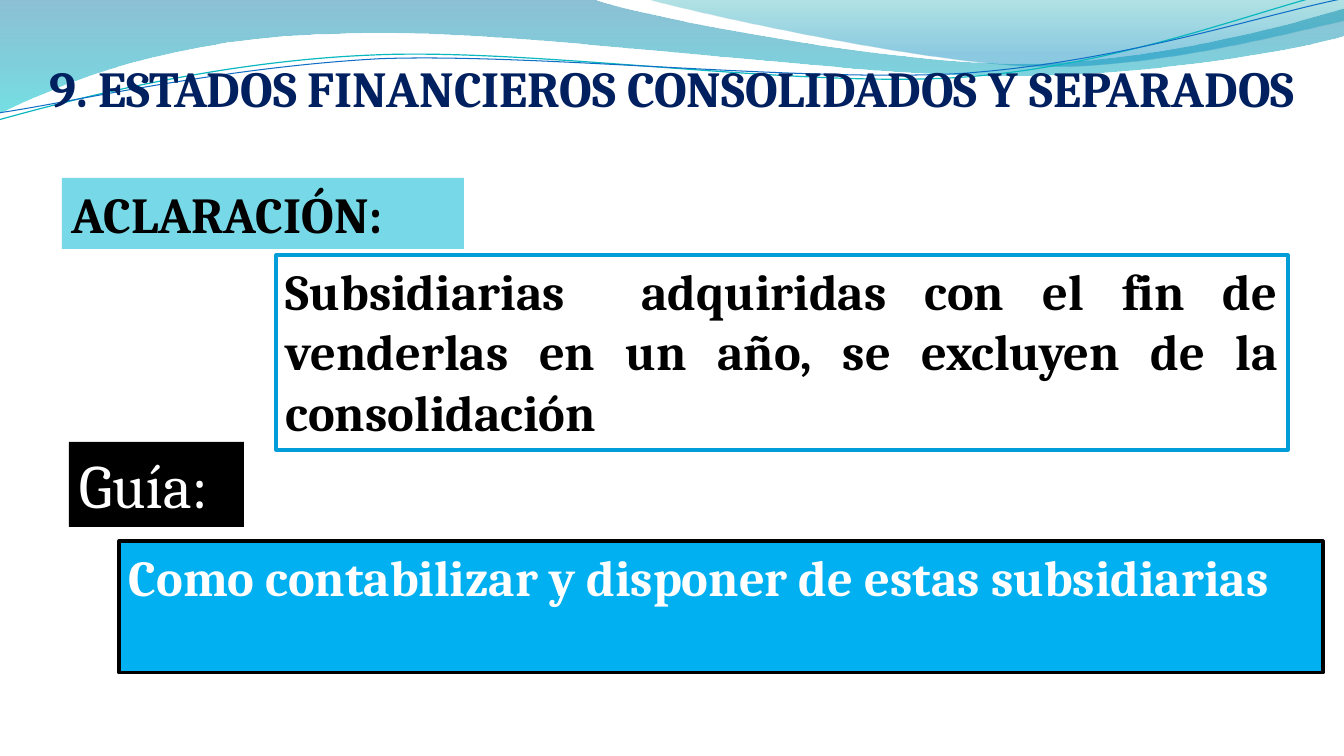
import pptx
import pptx.util
import pptx.dml.color
import pptx.enum.shapes
import pptx.enum.text
import pptx.oxml
import pptx.oxml.ns

RGB = pptx.dml.color.RGBColor
ALIGN = pptx.enum.text.PP_ALIGN
PX = 914400 / 100.8
DRAWING_NS = pptx.oxml.ns.nsdecls("a")
STRAND_TILT = 357.3

WHITE = RGB(0xFF, 0xFF, 0xFF)
BLACK = RGB(0x00, 0x00, 0x00)
NAVY = RGB(0x00, 0x20, 0x60)
SKY = RGB(0x00, 0xB0, 0xF0)
AQUA = RGB(0x77, 0xD9, 0xE8)
BORDER_BLUE = RGB(0x00, 0x9D, 0xD9)
DEEP_TEAL = RGB(0x00, 0x74, 0xA1)
TURQUOISE = RGB(0x00, 0xC6, 0xCF)
SEA_GREEN = RGB(0x00, 0xA1, 0xA9)
OCEAN = RGB(0x00, 0x8B, 0xBF)
STRAND_TEAL = RGB(0x0A, 0xB8, 0xBF)
STRAND_BLUE = RGB(0x0F, 0x6F, 0xC6)

WAVES = [
    ([[(0, 0)], [(592, -1)],
      [(639, 17), (892, 64), (1019, 64)], [(1147, 64), (1288, 26), (1344, 9)],
      [(1346, 36)],
      [(1322, 44), (1169, 77), (1002, 76)], [(836, 76), (513, 28), (346, 34)],
      [(173, 36), (61, 84), (-1, 114)]],
     [(0, DEEP_TEAL, 45), (1, TURQUOISE, 55)]),
    ([[(644, -1)],
      [(684, 11), (916, 62), (1033, 66)], [(1150, 70), (1292, 32), (1344, 21)],
      [(1344, 0)]],
     [(0, SEA_GREEN, 30), (0.8, OCEAN, 45)]),
]
STRANDS = [
    ([[(-3, 88)],
      [(64, 73), (213, 40), (372, 41)], [(532, 41), (794, 94), (957, 91)],
      [(1118, 88), (1264, 36), (1344, 22)]], STRAND_TEAL, 0.85),
    ([[(-2, 81)],
      [(63, 75), (220, 46), (381, 45)], [(541, 47), (801, 89), (962, 87)],
      [(1123, 83), (1266, 42), (1347, 30)]], STRAND_BLUE, 0.75),
]


def px(length):
    """Turn a length in px into EMU."""
    return pptx.util.Emu(round(length * PX))


def add_outline(slide, left, top, segments, close):
    """Draw straight and cubic segments with their origin at the given corner."""
    chain = [[(px(left + x), px(top + y)) for x, y in segment]
             for segment in segments]
    corners = [segment[-1] for segment in chain]
    builder = slide.shapes.build_freeform(*corners[0], scale=1.0)
    builder.add_line_segments(corners[1:], close=close)
    outline = builder.convert_to_shape()
    outline.shadow.inherit = False
    edges = list(outline._element.iter(pptx.oxml.ns.qn("a:lnTo")))
    for edge, segment in zip(edges, chain[1:]):
        if len(segment) == 3:
            points = "".join(f'<a:pt x="{x - outline.left}" y="{y - outline.top}"/>'
                             for x, y in segment)
            edge.getparent().replace(edge, pptx.oxml.parse_xml(
                f"<a:cubicBezTo {DRAWING_NS}>{points}</a:cubicBezTo>"))
    return outline


def add_header(slide, left, top):
    """Draw the translucent waves and the thin strands over them."""
    for segments, stops in WAVES:
        wave = add_outline(slide, left, top, segments, True)
        wave.line.fill.background()
        wave.fill.gradient()
        wave.fill.gradient_angle = 270
        for stop, (position, colour, _) in zip(wave.fill.gradient_stops, stops):
            stop.position = position
            stop.color.rgb = colour
        tints = wave._element.spPr.iter(pptx.oxml.ns.qn("a:srgbClr"))
        for tint, (_, _, opacity) in zip(list(tints), stops):
            tint.append(pptx.oxml.parse_xml(
                f'<a:alpha {DRAWING_NS} val="{opacity * 1000}"/>'))
    for segments, colour, width in STRANDS:
        strand = add_outline(slide, left, top, segments, False)
        strand.rotation = STRAND_TILT
        strand.fill.background()
        strand.line.color.rgb = colour
        strand.line.width = pptx.util.Pt(width)


def write(holder, wording, colour, size=36, bold=True, align=ALIGN.LEFT):
    """Put one paragraph at the top of a shape."""
    frame = holder.text_frame
    frame.word_wrap = True
    frame.auto_size = pptx.enum.text.MSO_AUTO_SIZE.SHAPE_TO_FIT_TEXT
    frame.vertical_anchor = pptx.enum.text.MSO_ANCHOR.TOP
    paragraph = frame.paragraphs[0]
    paragraph.text = wording
    paragraph.alignment = align
    paragraph.font.name = "Cambria"
    paragraph.font.size = pptx.util.Pt(size)
    paragraph.font.bold = bold
    paragraph.font.color.rgb = colour


def add_title(slide, box, wording):
    """Write the centred slide title."""
    title = slide.shapes.add_textbox(*map(px, box))
    write(title, wording, NAVY, align=ALIGN.CENTER)


def add_panel(slide, box, fill, border, wording, colour, **style):
    """Draw a filled panel with its text and an optional border."""
    panel = slide.shapes.add_shape(
        pptx.enum.shapes.MSO_SHAPE.RECTANGLE, *map(px, box))
    panel.shadow.inherit = False
    panel.fill.solid()
    panel.fill.fore_color.rgb = fill
    if border is None:
        panel.line.fill.background()
    else:
        panel.line.color.rgb = border
        panel.line.width = pptx.util.Pt(2.25)
    write(panel, wording, colour, **style)


def main():
    """Build the slide and save it."""
    deck = pptx.Presentation()
    deck.slide_width, deck.slide_height = px(1344), px(756)
    slide = deck.slides.add_slide(deck.slide_layouts[6])
    add_header(slide, 0, 0)
    add_title(slide, (0, 52, 1344, 132),
              "9. ESTADOS FINANCIEROS CONSOLIDADOS Y SEPARADOS")
    add_panel(slide, (276, 255, 1012, 195), WHITE, BORDER_BLUE,
              "Subsidiarias  adquiridas con el fin de venderlas en un año, "
              "se excluyen de la consolidación", BLACK, align=ALIGN.JUSTIFY)
    add_panel(slide, (62, 178, 402, 71), AQUA, None, "ACLARACIÓN:", BLACK)
    add_panel(slide, (69, 442, 175, 85), BLACK, None, "Guía:", WHITE,
              size=44, bold=False)
    add_panel(slide, (119, 541, 1204, 132), SKY, BLACK,
              "Como contabilizar y disponer de estas subsidiarias", WHITE,
              align=ALIGN.JUSTIFY)
    deck.save("out.pptx")


if __name__ == "__main__":
    main()
